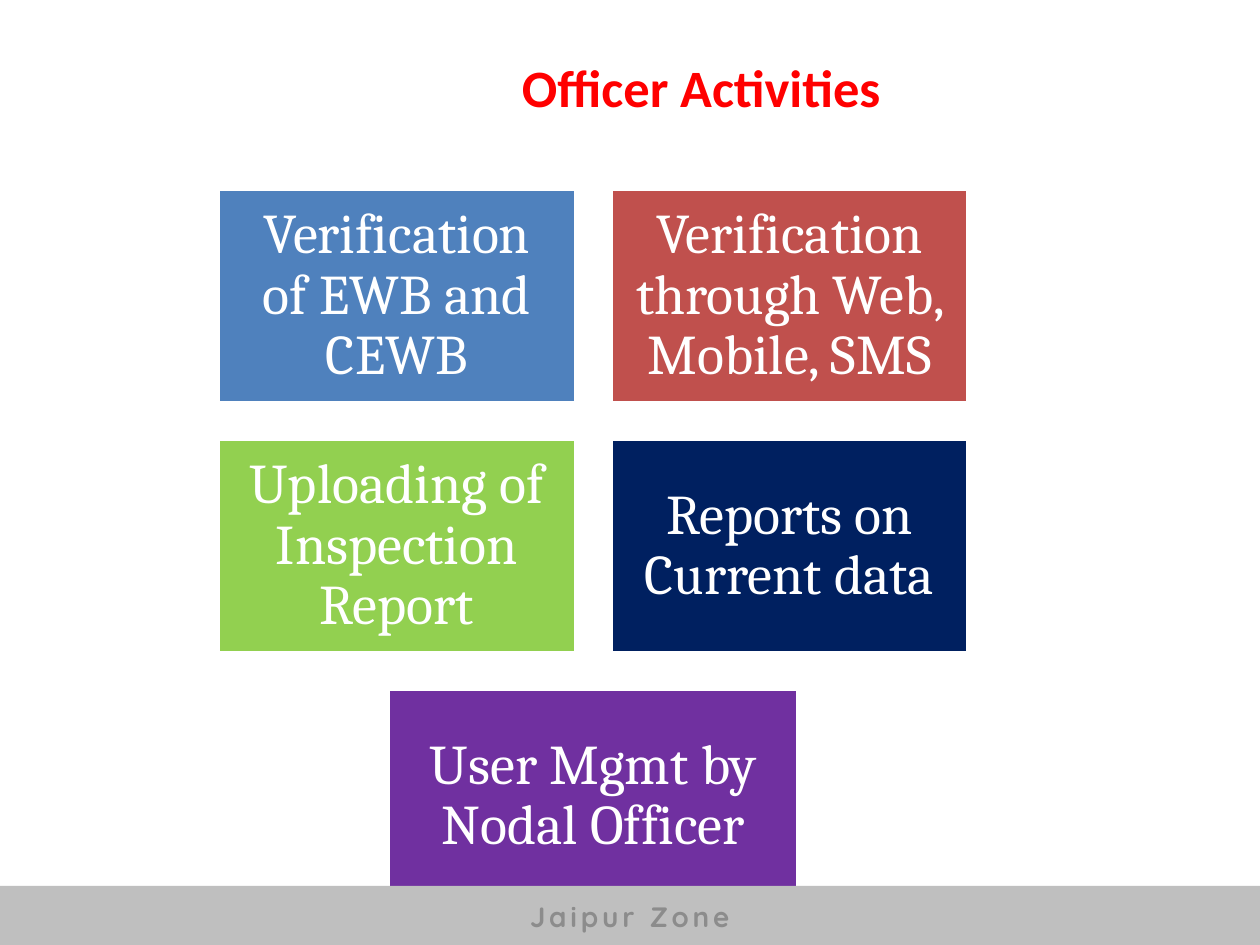
from dataclasses import dataclass

from pptx import Presentation
from pptx import util as u
from pptx.dml.color import RGBColor
from pptx.enum import shapes, text

WHITE = RGBColor(0xFF, 0xFF, 0xFF)
RED = RGBColor(0xFF, 0x00, 0x00)
BLUE = RGBColor(0x4F, 0x81, 0xBD)
BRICK = RGBColor(0xC0, 0x50, 0x4D)
GREEN = RGBColor(0x92, 0xD0, 0x50)
NAVY = RGBColor(0x00, 0x20, 0x60)
PURPLE = RGBColor(0x70, 0x30, 0xA0)
SILVER = RGBColor(0xBF, 0xBF, 0xBF)
GREY = RGBColor(0x8C, 0x8C, 0x8C)

GRID_LEFT, GRID_TOP = 4.4, 3.81
TILE_WIDTH, TILE_HEIGHT, GAP = 7.2, 4.32, 0.72
LAST_WIDTH = 8.25
GRID_WIDTH = 2 * TILE_WIDTH + GAP


@dataclass(frozen=True)
class Style:
    font: str
    size: int
    color: RGBColor
    bold: bool = False
    line_spacing: float = 1.0
    inset: float = 0.25


@dataclass(frozen=True)
class Activity:
    label: str
    fill: RGBColor
    width: float = TILE_WIDTH


TITLE = Style("Calibri", 30, RED, bold=True)
TILE = Style("Cambria", 32, WHITE, line_spacing=0.9, inset=0.36)
FOOTER = Style("Quicksand", 16, GREY, bold=True)

ROWS = [
    [Activity("Verification of EWB and CEWB", BLUE),
     Activity("Verification through Web, Mobile, SMS", BRICK)],
    [Activity("Uploading of Inspection Report", GREEN),
     Activity("Reports on Current data", NAVY)],
    [Activity("User Mgmt by Nodal Officer", PURPLE, LAST_WIDTH)],
]


def write(box, label: str, style: Style):
    frame = box.text_frame
    frame.word_wrap = True
    frame.vertical_anchor = text.MSO_ANCHOR.MIDDLE
    frame.margin_left = frame.margin_right = u.Cm(style.inset)
    frame.margin_top = frame.margin_bottom = u.Cm(style.inset)
    para = frame.paragraphs[0]
    para.alignment = text.PP_ALIGN.CENTER
    para.line_spacing = style.line_spacing
    span = para.add_run()
    span.text = label
    para.font.name = style.font
    para.font.size = u.Pt(style.size)
    para.font.bold = style.bold
    para.font.color.rgb = style.color
    return span


def add_block(page, left: float, top: float, width: float, height: float,
              fill: RGBColor):
    box = page.shapes.add_shape(shapes.MSO_SHAPE.RECTANGLE, u.Cm(left),
                                u.Cm(top), u.Cm(width), u.Cm(height))
    box.shadow.inherit = False
    box.fill.solid()
    box.fill.fore_color.rgb = fill
    box.line.fill.background()
    return box


def add_activities(page) -> None:
    for row, activities in enumerate(ROWS):
        row_width = sum(a.width for a in activities) + GAP * (len(activities) - 1)
        left = GRID_LEFT + (GRID_WIDTH - row_width) / 2
        top = GRID_TOP + row * (TILE_HEIGHT + GAP)
        for activity in activities:
            box = add_block(page, left, top, activity.width, TILE_HEIGHT,
                            activity.fill)
            box.line.color.rgb = WHITE
            box.line.width = u.Pt(2)
            write(box, activity.label, TILE)
            left += activity.width + GAP


def main() -> None:
    deck = Presentation()
    deck.slide_width, deck.slide_height = u.Cm(25.4), u.Cm(19.05)
    page = deck.slides.add_slide(deck.slide_layouts[6])

    title = page.shapes.add_textbox(u.Cm(5.72), u.Cm(0.33), u.Cm(16.84), u.Cm(2.84))
    write(title, "Officer Activities", TITLE)

    add_activities(page)

    footer = add_block(page, 0, 17.86, 25.4, 1.24, SILVER)
    span = write(footer, "Jaipur Zone", FOOTER)
    span.font._element.set("spc", "220")

    deck.save("out.pptx")


if __name__ == "__main__":
    main()
